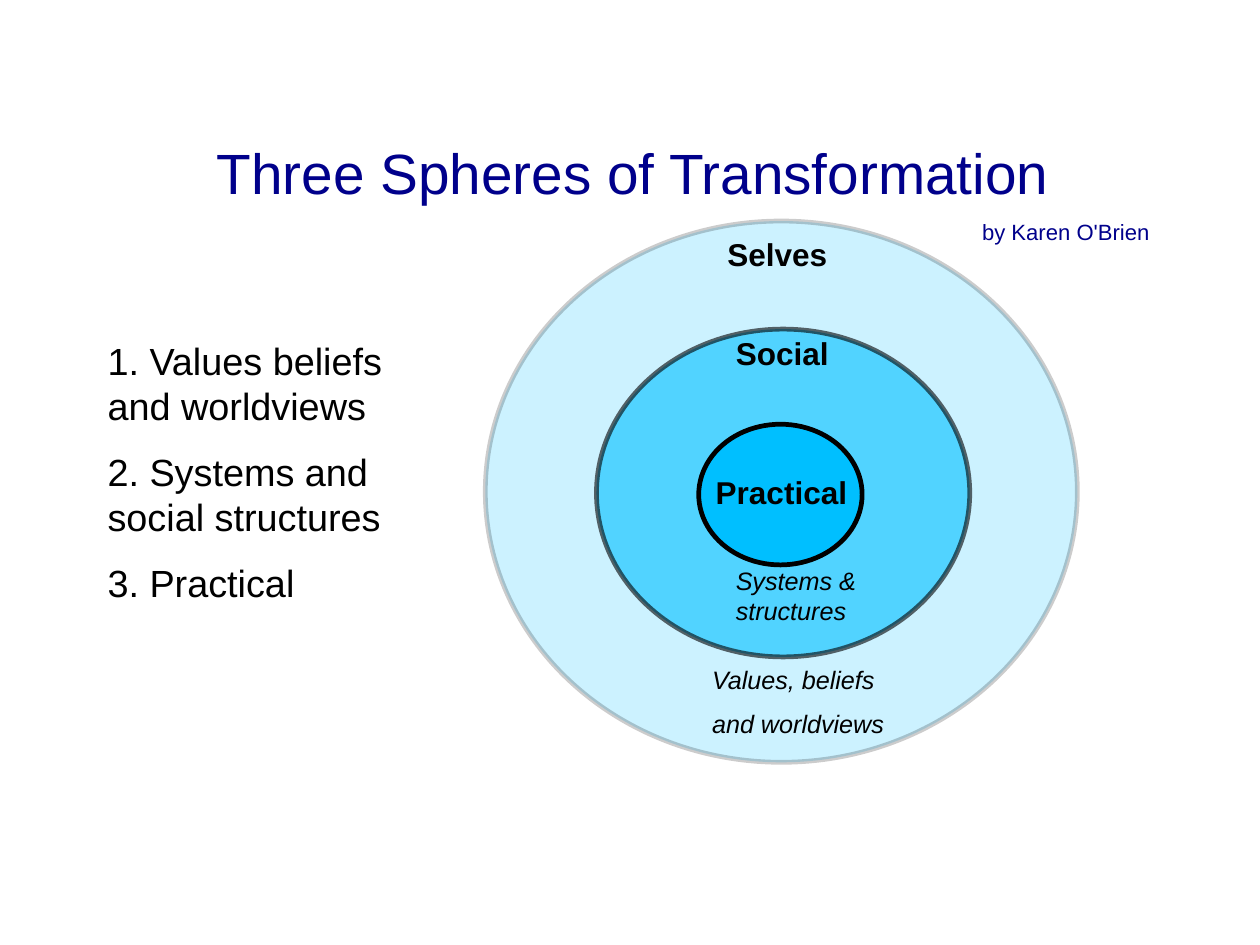
import pptx
import pptx.util
import pptx.dml.color
import pptx.enum.shapes
import pptx.enum.text
import pptx.oxml.ns
import lxml.etree

Cm, Pt = pptx.util.Cm, pptx.util.Pt
RGB = pptx.dml.color.RGBColor
ALIGN = pptx.enum.text.PP_ALIGN
NAVY = RGB(0x00, 0x00, 0x8B)
BLUE = RGB(0x00, 0xBF, 0xFF)
BLACK = RGB(0x00, 0x00, 0x00)


def paint(fill, color, alpha):
    """Fill with a color at the given opacity in percent."""
    fill.solid()
    fill.fore_color.rgb = color
    if alpha < 100:
        tag = pptx.oxml.ns.qn("a:srgbClr")
        for node in fill._xPr.iter(tag):
            mark = lxml.etree.SubElement(node, pptx.oxml.ns.qn("a:alpha"))
            mark.set("val", str(alpha * 1000))


def write(slide, box, lines, size, color=BLACK, bold=False, italic=False):
    """Add a text box without margins, one paragraph per line."""
    frame = slide.shapes.add_textbox(*map(Cm, box)).text_frame
    frame.word_wrap = True
    frame.margin_left = frame.margin_right = 0
    frame.margin_top = frame.margin_bottom = 0
    frame.text = "\n".join(lines)
    for para in frame.paragraphs:
        para.line_spacing = 0.98
        para.space_before = Pt(round(size * 0.58, 1))
        font = para.font
        font.name, font.size = "Arial", Pt(size)
        font.bold, font.italic = bold, italic
        font.color.rgb = color
    return frame


def add_title(slide, box):
    frame = write(slide, box, ["Three Spheres of Transformation",
                               "by Karen O'Brien"], 36, NAVY)
    author = frame.paragraphs[1]
    author.alignment = ALIGN.RIGHT
    author.font.size = Pt(14)
    author.space_before = Pt(8.1)


def add_list(slide, box):
    write(slide, box, ["1. Values beliefs and worldviews",
                       "2. Systems and social structures",
                       "3. Practical"], 24)


def add_rings(slide, box):
    left, top, width, height = box

    # Nested spheres: offset, size, opacity
    rings = [(0, 0, width, height, 20),
             (2.49, 2.42, 8.36, 7.34, 60),
             (4.78, 4.55, 3.66, 3.15, 100)]
    for x, y, w, h, alpha in rings:
        ring = slide.shapes.add_shape(
            pptx.enum.shapes.MSO_SHAPE.OVAL,
            Cm(left + x), Cm(top + y), Cm(w), Cm(h))
        ring.shadow.inherit = False
        paint(ring.fill, BLUE, alpha)
        ring.line.width = Pt(3)
        paint(ring.line.fill, BLACK, alpha)

    # Sphere names
    names = [("Selves", 5.42, 0.36), ("Social", 5.61, 2.57),
             ("Practical", 5.16, 5.69)]
    for name, x, y in names:
        write(slide, (left + x, top + y, 3.1, 0.9), [name], 20, bold=True)

    # Sphere contents
    notes = [(["Systems & structures"], 5.61, 7.75, 4.65, 1.47),
             (["Values, beliefs", "and worldviews"], 5.08, 9.96, 4.2, 1.7)]
    for lines, x, y, w, h in notes:
        write(slide, (left + x, top + y, w, h), lines, 16, italic=True)


def main():
    deck = pptx.Presentation()
    deck.slide_width, deck.slide_height = Cm(28.22), Cm(21.16)
    slide = deck.slides.add_slide(deck.slide_layouts[6])
    add_title(slide, (4.85, 3.15, 20.9, 2.4))
    add_rings(slide, (10.87, 4.95, 13.26, 12.12))
    add_list(slide, (2.41, 7.62, 7.32, 6.15))
    deck.save("out.pptx")


if __name__ == "__main__":
    main()
